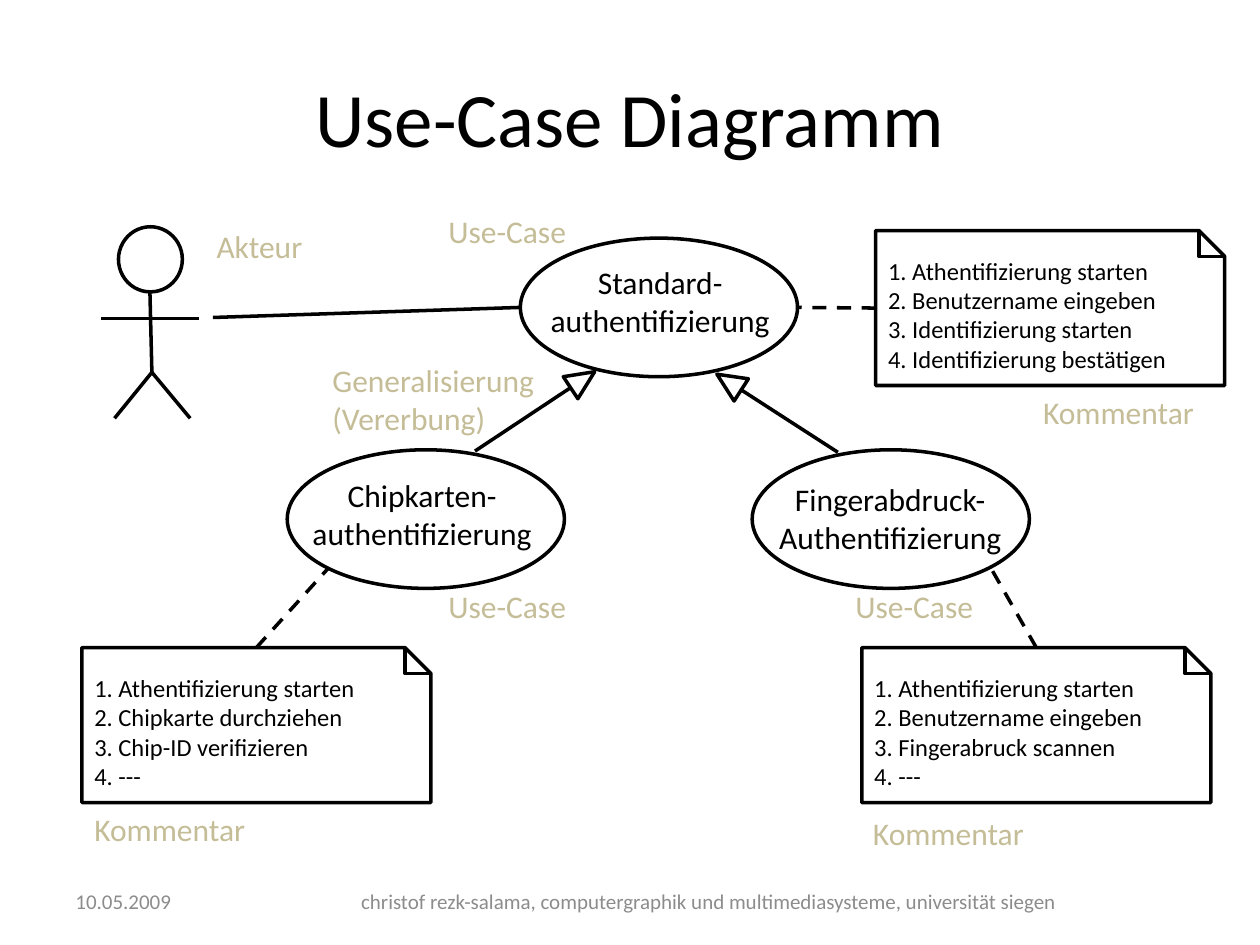
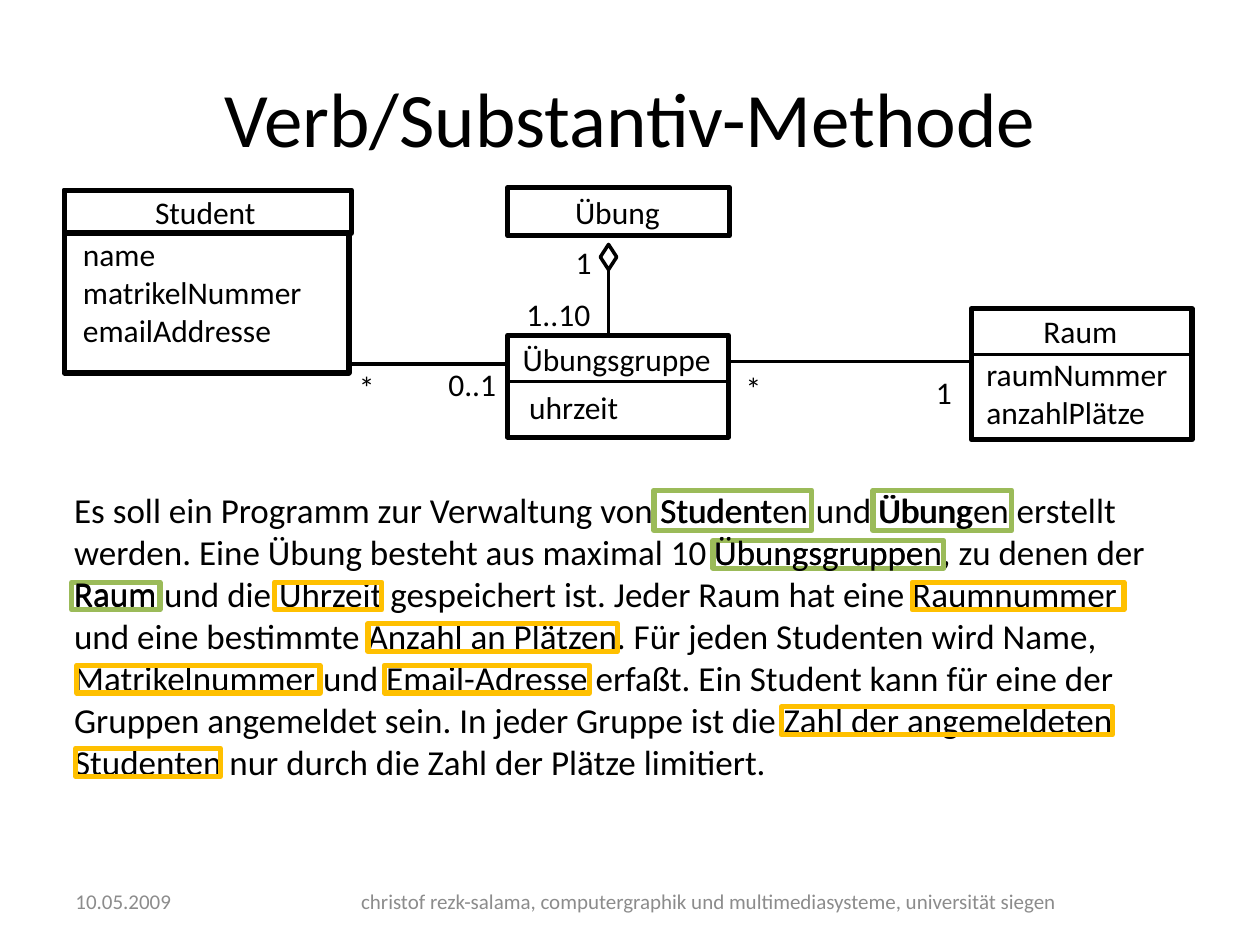
from dataclasses import dataclass
from math import atan2, cos, degrees, sin

from lxml.etree import SubElement
from pptx import Presentation
from pptx.dml.color import RGBColor
from pptx.enum.dml import MSO_LINE
from pptx.enum.shapes import MSO_CONNECTOR, MSO_SHAPE
from pptx.enum.text import MSO_ANCHOR, MSO_AUTO_SIZE, PP_ALIGN
from pptx.oxml.ns import qn
from pptx.util import Inches, Pt

# The slide is a grid of 100 columns by 75 rows
CELL = Inches(10) // 100
COLUMNS, ROWS = 100, 75

FONT = "Calibri"
BLACK, WHITE, GREY = "000000", "FFFFFF", "8C8C8C"
SAND, GREEN, AMBER = "C4BD97", "9BBB59", "FFC000"
DATE = "10.05.2009"
AUTHOR = "christof rezk-salama, computergraphik und multimediasysteme, universität siegen"


@dataclass
class Box:
    """A region in grid columns and rows."""
    left: float
    top: float
    width: float
    height: float

    def point(self, across, down):
        """The point at the given shares of the width and height."""
        return self.left + across * self.width, self.top + down * self.height

    def portion(self, across, down, width, height):
        """A smaller box, given in shares of this one."""
        return Box(*self.point(across, down), width * self.width, height * self.height)

    def lengths(self):
        return [grid(value) for value in (self.left, self.top, self.width, self.height)]


def grid(value):
    return round(value * CELL)


def color(hex_string):
    return RGBColor.from_string(hex_string)


# ---- Shared building blocks ----

def format_text(text_frame, text, size, text_color, align, anchor):
    text_frame.text = text
    text_frame.vertical_anchor = anchor
    for paragraph in text_frame.paragraphs:
        paragraph.alignment = align
        for run in paragraph.runs:
            run.font.name = FONT
            run.font.size = Pt(size)
            run.font.color.rgb = color(text_color)


def add_text(slide, box, text, size=18, text_color=BLACK, align=PP_ALIGN.LEFT,
             anchor=MSO_ANCHOR.MIDDLE):
    text_box = slide.shapes.add_textbox(*box.lengths())
    text_box.text_frame.word_wrap = True
    format_text(text_box.text_frame, text, size, text_color, align, anchor)


def add_label(slide, left, top, width, text, size=18, text_color=BLACK, align=PP_ALIGN.LEFT):
    """Unwrapped text whose height follows from its lines."""
    lines = 1 + text.count("\n") + text.count("\v")
    height = 1 + lines * size * 0.17
    text_box = slide.shapes.add_textbox(*Box(left, top, width, height).lengths())
    text_box.text_frame.word_wrap = False
    text_box.text_frame.auto_size = MSO_AUTO_SIZE.SHAPE_TO_FIT_TEXT
    format_text(text_box.text_frame, text, size, text_color, align, MSO_ANCHOR.TOP)


def style_shape(shape, fill, line_color, line_width):
    shape.shadow.inherit = False
    if fill:
        shape.fill.solid()
        shape.fill.fore_color.rgb = color(fill)
    else:
        shape.fill.background()
    shape.line.color.rgb = color(line_color)
    shape.line.width = Pt(line_width)


def add_outline(slide, kind, box, fill=WHITE, line_color=BLACK, line_width=2):
    shape = slide.shapes.add_shape(kind, *box.lengths())
    style_shape(shape, fill, line_color, line_width)
    return shape


def add_line(slide, start, end, width=2, dashed=False):
    connector = slide.shapes.add_connector(
        MSO_CONNECTOR.STRAIGHT, *[grid(value) for value in (*start, *end)])
    connector.line.color.rgb = color(BLACK)
    connector.line.width = Pt(width)
    if dashed:
        connector.line.dash_style = MSO_LINE.DASH
    SubElement(connector._element.spPr, qn("a:effectLst"))


def add_headed_line(slide, start, end, kind, width, height, setback):
    """A line ending in a white shape that points along it."""
    add_line(slide, start, end)
    angle = atan2(end[0] - start[0], start[1] - end[1])
    center_x = end[0] - setback * sin(angle)
    center_y = end[1] + setback * cos(angle)
    head = add_outline(slide, kind, Box(center_x - width / 2, center_y - height / 2, width, height))
    head.rotation = degrees(angle) % 360


def new_slide(presentation, title):
    """A slide with the common title and footer."""
    slide = presentation.slides.add_slide(presentation.slide_layouts[5])
    placeholder = slide.shapes.title
    placeholder.left, placeholder.top, placeholder.width, placeholder.height = \
        Box(5, 3, 90, 12.5).lengths()
    format_text(placeholder.text_frame, title, 44, BLACK, PP_ALIGN.CENTER, MSO_ANCHOR.MIDDLE)
    add_text(slide, Box(5, 69.5, 19.2, 4), DATE, 12, GREY)
    add_text(slide, Box(25, 69.5, 62.5, 4), AUTHOR, 12, GREY, PP_ALIGN.CENTER)
    return slide


# ---- Use case diagram ----

def add_actor(slide, box):
    add_outline(slide, MSO_SHAPE.FLOWCHART_CONNECTOR, box.portion(0.18, 0, 0.65, 0.34))
    hip = box.point(0.52, 0.76)
    add_line(slide, box.point(0.5, 0.34), hip)
    add_line(slide, box.point(0, 0.48), box.point(1, 0.48))
    for foot in (0.14, 0.91):
        add_line(slide, hip, box.point(foot, 1))


def add_use_case(slide, box, text, text_left, text_top, text_width):
    add_outline(slide, MSO_SHAPE.OVAL, box)
    add_label(slide, box.left + text_left, box.top + text_top, text_width, text,
              align=PP_ALIGN.CENTER)


def add_note(slide, box, steps):
    """A comment sheet with numbered steps and a folded corner."""
    sheet = add_outline(slide, MSO_SHAPE.SNIP_1_RECTANGLE, box)
    text = "\n".join(f"{number}. {step}" for number, step in enumerate(steps, 1))
    format_text(sheet.text_frame, text, 14, BLACK, PP_ALIGN.LEFT, MSO_ANCHOR.MIDDLE)
    fold = box.height / 6
    right, top = box.point(1, 0)
    corner = [(right - fold, top), (right - fold, top + fold), (right, top + fold)]
    points = [(grid(x), grid(y)) for x, y in corner]
    builder = slide.shapes.build_freeform(*points[0], scale=1.0)
    builder.add_line_segments(points[1:], close=False)
    style_shape(builder.convert_to_shape(), None, BLACK, 2)


def build_use_case_slide(presentation):
    slide = new_slide(presentation, "Use-Case Diagramm")
    add_actor(slide, Box(8, 18, 7.8, 15.2))

    # Use cases
    standard = Box(41.3, 18.9, 22, 11)
    chip_card = Box(22.8, 35.7, 22, 11)
    fingerprint = Box(59.7, 35.7, 22, 11)
    add_use_case(slide, standard, "Standard-\vauthentifizierung", 1.3, 1.5, 19.6)
    add_use_case(slide, chip_card, "Chipkarten-\vauthentifizierung", 0.9, 1.6, 19.6)
    add_use_case(slide, fingerprint, "Fingerabdruck-\vAuthentifizierung", 0.7, 1.9, 20.5)

    # Comment sheets
    start, user = "Athentifizierung starten", "Benutzername eingeben"
    standard_note = Box(69.5, 18.3, 27.7, 12.3)
    fingerprint_note = Box(68.4, 51.4, 27.7, 12.3)
    chip_note = Box(6.5, 51.4, 27.7, 12.3)
    add_note(slide, standard_note,
             [start, user, "Identifizierung starten", "Identifizierung bestätigen"])
    add_note(slide, fingerprint_note, [start, user, "Fingerabruck scannen", "---"])
    add_note(slide, chip_note, [start, "Chipkarte durchziehen", "Chip-ID verifizieren", "---"])

    # Generalisations
    for begin, end in (((37.7, 35.8), (47.2, 29.5)), ((66.5, 35.9), (56.9, 29.7))):
        add_headed_line(slide, begin, end, MSO_SHAPE.ISOSCELES_TRIANGLE, 2.1, 2.3, 1.15)

    # Associations
    add_line(slide, (16.9, 25.2), standard.point(0, 0.5))
    add_line(slide, chip_note.point(0.5, 0), chip_card.point(0.15, 0.85), dashed=True)
    add_line(slide, fingerprint_note.point(0.5, 0), fingerprint.point(0.86, 0.85), dashed=True)
    add_line(slide, standard_note.point(0, 0.5), standard.point(1, 0.5), dashed=True)

    # Names of the notation
    for left, top, width, text in (
            (81.8, 30.7, 14.1, "Kommentar"),
            (16.2, 17.5, 8.9, "Akteur"),
            (34.6, 16.3, 11.5, "Use-Case"),
            (25.4, 28.2, 18.2, "Generalisierung\v(Vererbung)"),
            (34.6, 46.1, 11.5, "Use-Case"),
            (66.9, 46.1, 11.5, "Use-Case"),
            (68.3, 64.1, 14.1, "Kommentar"),
            (6.5, 63.8, 14.1, "Kommentar")):
        add_label(slide, left, top, width, text, text_color=SAND)


# ---- Class diagram ----

def add_class(slide, box, name, header, attributes="", offset=(0, 0), width=0, boxed=False):
    """A class with its name in the header and attributes below."""
    add_outline(slide, MSO_SHAPE.RECTANGLE, box, line_width=3)
    if boxed:
        add_outline(slide, MSO_SHAPE.RECTANGLE,
                    Box(box.left, box.top, box.width + 0.2, header), line_width=3)
    elif attributes:
        add_line(slide, (box.left, box.top + header),
                 (box.left + box.width, box.top + header), 1.75)
    add_text(slide, Box(box.left, box.top + (header - 4) / 2, box.width - 0.2, 4), name,
             align=PP_ALIGN.CENTER)
    if attributes:
        add_label(slide, box.left + offset[0], box.top + header + offset[1], width, attributes)


def add_task_text(slide, box):
    """The task with its nouns framed and the classes stressed."""
    add_text(slide, box, (
        "Es soll ein Programm zur Verwaltung von Studenten und Übungen erstellt werden. "
        "Eine Übung besteht aus maximal 10 Übungsgruppen, zu denen der Raum und die Uhrzeit "
        "gespeichert ist. Jeder Raum hat eine Raumnummer und eine bestimmte Anzahl an Plätzen. "
        "Für jeden Studenten wird Name, Matrikelnummer und Email-Adresse erfaßt. Ein Student "
        "kann für eine der Gruppen angemeldet sein. In jeder Gruppe ist die Zahl der "
        "angemeldeten Studenten nur durch die Zahl der Plätze limitiert."), 20)
    line_step = 3.3

    # Frames: text line, left, width, colour; those of the first line are taller
    for line, left, width, frame_color in (
            (0, 47, 12.5, GREEN), (0, 64.4, 11, GREEN), (1, 51.7, 18.3, GREEN),
            (2, 0.8, 7, GREEN), (2, 16.9, 8.5, AMBER), (2, 67.5, 16.8, AMBER),
            (3, 24.3, 19.8, AMBER), (4, 25.6, 16.3, AMBER), (5, 57.1, 26.3, AMBER),
            (4, 1.2, 19.3, AMBER), (6, 1.1, 11.5, AMBER)):
        offset, height = (2.1, 3.2) if line == 0 else (2.8, 2.2)
        frame = Box(box.left + left, box.top + offset + line * line_step, width, height)
        add_outline(slide, MSO_SHAPE.RECTANGLE, frame, None, frame_color, 3)

    # Class names laid over the text
    for line, left, width, word in (
            (0, 46.5, 11, "Student"), (0, 63.8, 9.6, "Übung"),
            (1, 50.8, 18.8, "Übungsgruppe"), (2, 0, 8.6, "Raum")):
        add_label(slide, box.left + left, box.top + 1.5 + line * line_step, width, word, 20)


def build_class_slide(presentation):
    slide = new_slide(presentation, "Verb/Substantiv-Methode")
    add_task_text(slide, Box(4.9, 36.8, 88.6, 27.3))

    # Classes
    student = Box(5.1, 15.1, 22.6, 14.5)
    exercise = Box(40.3, 14.9, 17.6, 3.8)
    group = Box(40.3, 26.6, 17.5, 8.1)
    room = Box(77.1, 24.5, 17.5, 10.4)
    add_class(slide, student, "Student", 3.4, "name\nmatrikelNummer\nemailAddresse",
              (0.5, -0.3), 19.6, boxed=True)
    add_class(slide, exercise, "Übung", 3.8)
    add_class(slide, group, "Übungsgruppe", 3.7, "uhrzeit", (0.7, 0), 9.2)
    add_class(slide, room, "Raum", 3.6, "raumNummer\nanzahlPlätze", (0.2, -0.4), 16.5)

    # Associations
    add_headed_line(slide, (48.3, 26.5), (48.3, 20), MSO_SHAPE.DIAMOND, 1.3, 2, 0.4)
    add_line(slide, (57.9, 28.7), (77, 28.7))
    add_line(slide, (27.7, 28.9), (40.3, 28.9))

    # Multiplicities
    for left, top, width, text in (
            (40.8, 22.9, 7.1, "1..10"), (44.7, 18.8, 3.3, "1"), (73.3, 29.1, 3.3, "1"),
            (58.2, 28.8, 3.3, "*"), (34.6, 28.5, 5.8, "0..1"), (27.5, 28.7, 3.3, "*")):
        add_label(slide, left, top, width, text)


def main():
    presentation = Presentation()
    presentation.slide_width = CELL * COLUMNS
    presentation.slide_height = CELL * ROWS
    build_use_case_slide(presentation)
    build_class_slide(presentation)
    presentation.save("out.pptx")


if __name__ == "__main__":
    main()
